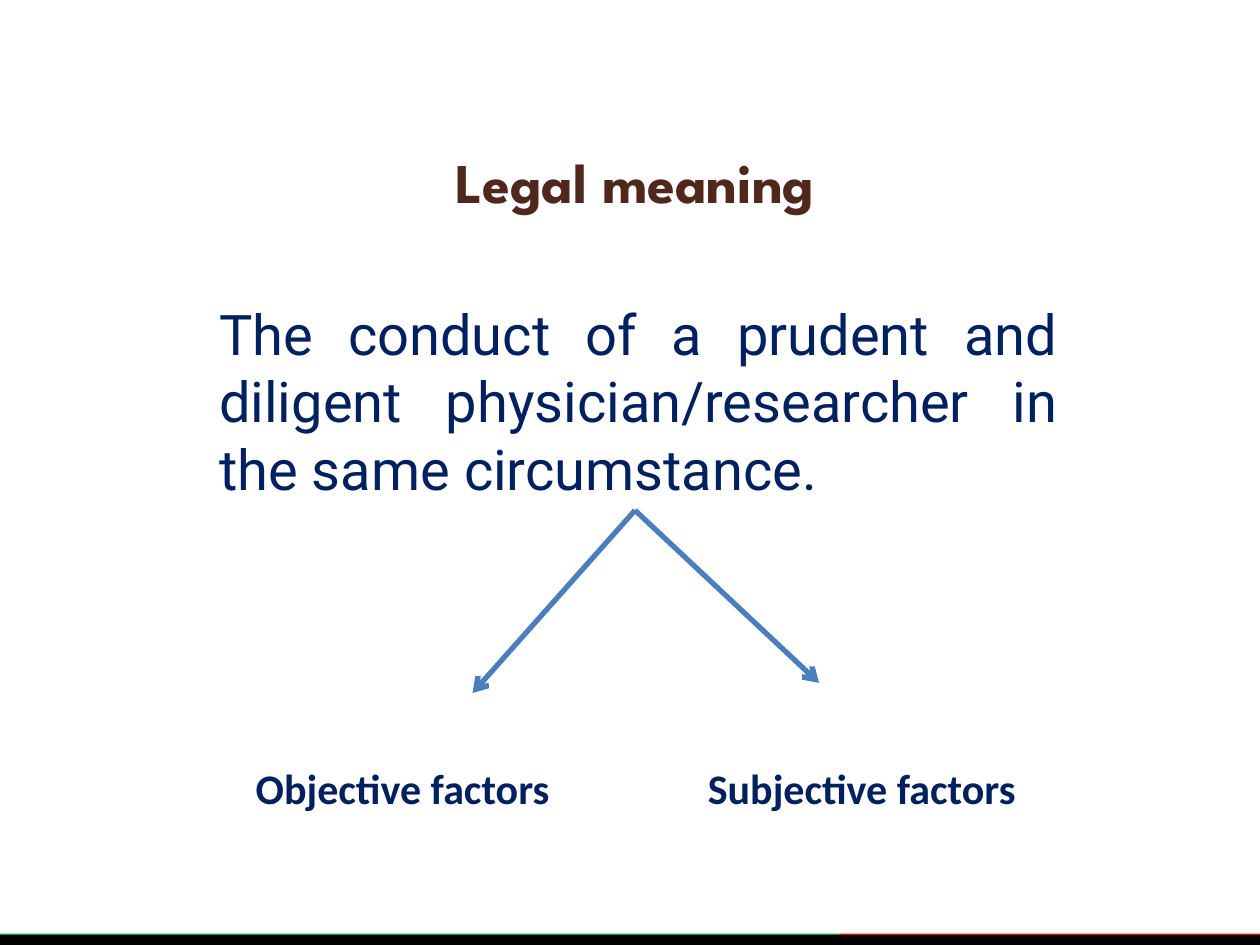
from lxml import etree
from pptx import Presentation
from pptx.dml.color import RGBColor
from pptx.enum.shapes import MSO_CONNECTOR, MSO_SHAPE
from pptx.enum.text import MSO_ANCHOR, PP_ALIGN
from pptx.oxml.ns import qn
from pptx.util import Inches, Pt

RECTANGLE = MSO_SHAPE.RECTANGLE
STRAIGHT = MSO_CONNECTOR.STRAIGHT
MIDDLE, TOP = MSO_ANCHOR.MIDDLE, MSO_ANCHOR.TOP
CENTER, JUSTIFY = PP_ALIGN.CENTER, PP_ALIGN.JUSTIFY

GREEN = RGBColor(0x00, 0xB0, 0x50)
RED = RGBColor(0xFF, 0x00, 0x00)
BLACK = RGBColor(0x00, 0x00, 0x00)
BROWN = RGBColor(0x4F, 0x27, 0x1C)
NAVY = RGBColor(0x00, 0x20, 0x60)
BLUE = RGBColor(0x4B, 0x7E, 0xBC)

WIDTH, HEIGHT = 10, 7.5
BAR_TOP = 7.42
EDGE = 0.01  # how far the coloured strips show above the black bar
LABEL_TOP, LABEL_HEIGHT = 6, 0.5
BOTTOM_SITE = 2


def add_bar(slide, left, top, width, color):
    """A strip from top down to the foot of the slide."""
    bar = slide.shapes.add_shape(RECTANGLE, Inches(left), Inches(top),
                                 Inches(width), Inches(HEIGHT - top))
    bar.shadow.inherit = False
    bar.fill.solid()
    bar.fill.fore_color.rgb = color
    bar.line.fill.background()


def add_text(slide, box, text, font, size, color, align=CENTER, bold=False,
             anchor=TOP, wrap=True):
    text_box = slide.shapes.add_textbox(*(Inches(length) for length in box))
    frame = text_box.text_frame
    frame.word_wrap = wrap
    frame.vertical_anchor = anchor
    paragraph = frame.paragraphs[0]
    paragraph.alignment = align
    run = paragraph.add_run()
    run.text = text
    run.font.name = font
    run.font.size = Pt(size)
    run.font.bold = bold
    run.font.color.rgb = color
    return text_box


def add_arrow(slide, source, end_x, end_y):
    """An arrow from the middle of the source's bottom side."""
    arrow = slide.shapes.add_connector(STRAIGHT, 0, 0, Inches(end_x), Inches(end_y))
    arrow.begin_connect(source, BOTTOM_SITE)
    arrow.line.color.rgb = BLUE
    arrow.line.width = Pt(3)
    etree.SubElement(arrow.line._get_or_add_ln(), qn("a:tailEnd"), type="arrow")
    etree.SubElement(arrow._element.spPr, qn("a:effectLst"))


def main():
    prs = Presentation()
    prs.slide_width, prs.slide_height = Inches(WIDTH), Inches(HEIGHT)
    slide = prs.slides.add_slide(prs.slide_layouts[6])

    # Footer: green and red edge behind a black bar
    split = WIDTH * 2 / 3
    add_bar(slide, 0, BAR_TOP - EDGE, split, GREEN)
    add_bar(slide, split, BAR_TOP - EDGE, WIDTH - split, RED)
    add_bar(slide, 0, BAR_TOP, WIDTH, BLACK)

    # Title, raised above the middle of its box
    title = add_text(slide, (0.75, 1.08, 8.58, 1.17), "Legal meaning",
                     "League Spartan", 32, BROWN, bold=True, anchor=MIDDLE)
    title.text_frame.margin_bottom = Inches(0.5)

    # Definition
    definition = add_text(
        slide, (1.58, 2.33, 6.92, 1.72),
        "The conduct of a prudent and diligent physician/researcher "
        "in the same circumstance.",
        "Roboto", 32, NAVY, align=JUSTIFY)
    definition.text_frame.margin_left = Inches(0.16)
    definition.text_frame.paragraphs[0].space_before = Pt(3)

    # The two kinds of factors
    for label, left, width in (("Objective factors", 1.64, 3.11),
                               ("Subjective factors", 5.2, 3.28)):
        add_text(slide, (left, LABEL_TOP, width, LABEL_HEIGHT), label,
                 "Calibri", 24, NAVY, bold=True, wrap=False)

    # Arrows from the definition towards the factors
    for end_x, end_y in ((6.5, 5.42), (3.75, 5.5)):
        add_arrow(slide, definition, end_x, end_y)

    prs.save("out.pptx")


if __name__ == "__main__":
    main()
